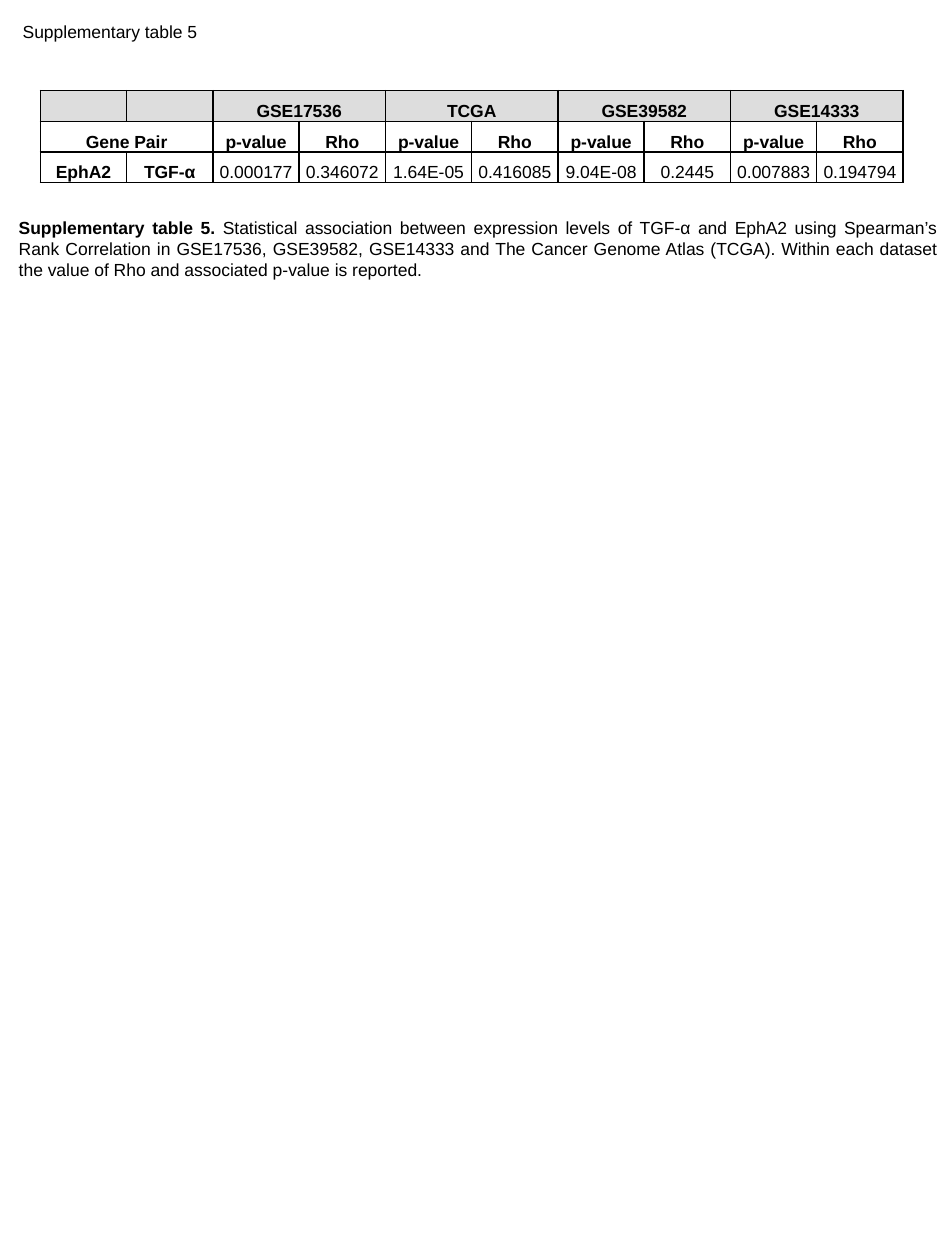
from lxml.etree import SubElement
from pptx import Presentation
from pptx.dml.color import RGBColor
from pptx.enum.text import MSO_ANCHOR, MSO_AUTO_SIZE, PP_ALIGN
from pptx.oxml.ns import qn
from pptx.util import Inches, Pt

THEME = {
    "font": "Arial",
    "size": Pt(10),
    "ink": RGBColor(0x00, 0x00, 0x00),
    "head": RGBColor(0xDD, 0xDD, 0xDD),
    "rule": Pt(1),
}


def add_text(p, text, bold=False):
    r = p.add_run()
    r.text = text
    for name, value in {"name": THEME["font"], "size": THEME["size"], "bold": bold}.items():
        setattr(r.font, name, value)
    r.font.color.rgb = THEME["ink"]


def add_borders(cell):
    tcPr = cell._tc.get_or_add_tcPr()
    for side in ("lnL", "lnR", "lnT", "lnB"):
        ln = SubElement(tcPr, qn(f"a:{side}"), w=str(THEME["rule"]))
        fill = SubElement(ln, qn("a:solidFill"))
        SubElement(fill, qn("a:srgbClr"), val=str(THEME["ink"]))


prs = Presentation()
prs.slide_width, prs.slide_height = Inches(7.5), Inches(10)
s = prs.slides.add_slide(prs.slide_layouts[5])

# Heading
title = s.shapes.title
title.left, title.top, title.width, title.height = (
    Inches(v) for v in (0.08, 0.12, 1.6, 0.27))
tf = title.text_frame
for name, value in {"word_wrap": False, "vertical_anchor": MSO_ANCHOR.TOP,
                    "auto_size": MSO_AUTO_SIZE.SHAPE_TO_FIT_TEXT}.items():
    setattr(tf, name, value)
tf.paragraphs[0].alignment = PP_ALIGN.LEFT
add_text(tf.paragraphs[0], "Supplementary table 5")

# Correlation table: one pair of columns for the genes and for each dataset
datasets = {
    "GSE17536": ("0.000177", "0.346072"),
    "TCGA": ("1.64E-05", "0.416085"),
    "GSE39582": ("9.04E-08", "0.2445"),
    "GSE14333": ("0.007883", "0.194794"),
}
rows = [["", ""], ["Gene Pair", ""], ["EphA2", "TGF-α"]]
for dataset, values in datasets.items():
    rows[0] += [dataset, ""]
    rows[1] += ["p-value", "Rho"]
    rows[2] += values

n_rows, n_cols = len(rows), len(rows[0])
col_w, row_h = Inches(0.685), Inches(0.243)
table = s.shapes.add_table(n_rows, n_cols, Inches(0.32), Inches(0.72),
                           col_w * n_cols, row_h * n_rows).table
table.first_row = table.horz_banding = False
for col in table.columns:
    col.width = col_w
for row in table.rows:
    row.height = row_h

cell_format = {
    "vertical_anchor": MSO_ANCHOR.BOTTOM,
    "margin_left": Inches(0.01), "margin_right": Inches(0.01),
    "margin_top": Inches(0.01), "margin_bottom": 0,
}
for i, row in enumerate(rows):
    for j, text in enumerate(row):
        cell = table.cell(i, j)
        for name, value in cell_format.items():
            setattr(cell, name, value)
        add_borders(cell)
        if i == 0:
            cell.fill.solid()
            cell.fill.fore_color.rgb = THEME["head"]
        else:
            cell.fill.background()
        p = cell.text_frame.paragraphs[0]
        p.alignment = PP_ALIGN.CENTER
        if text:
            add_text(p, text, bold=i < 2 or j < 2)
        else:
            # Keeps empty cells from stretching the row
            SubElement(p._p, qn("a:endParaRPr"), sz=str(int(THEME["size"].pt * 100)))

# Merged headings
for i, j in [(1, 0)] + [(0, j) for j in range(2, n_cols, 2)]:
    table.cell(i, j).merge(table.cell(i, j + 1))

# Caption
tf = s.shapes.add_textbox(Inches(0.05), Inches(1.67), Inches(7.48), Inches(0.61)).text_frame
tf.word_wrap = True
tf.auto_size = MSO_AUTO_SIZE.SHAPE_TO_FIT_TEXT
p = tf.paragraphs[0]
p.alignment = PP_ALIGN.JUSTIFY
add_text(p, "Supplementary table 5. ", bold=True)
add_text(p, "Statistical association between expression levels of TGF-α and EphA2 using "
            "Spearman’s Rank Correlation in GSE17536, GSE39582, GSE14333 and The Cancer "
            "Genome Atlas (TCGA). Within each dataset the value of Rho and associated "
            "p-value is reported.")

prs.save("out.pptx")
